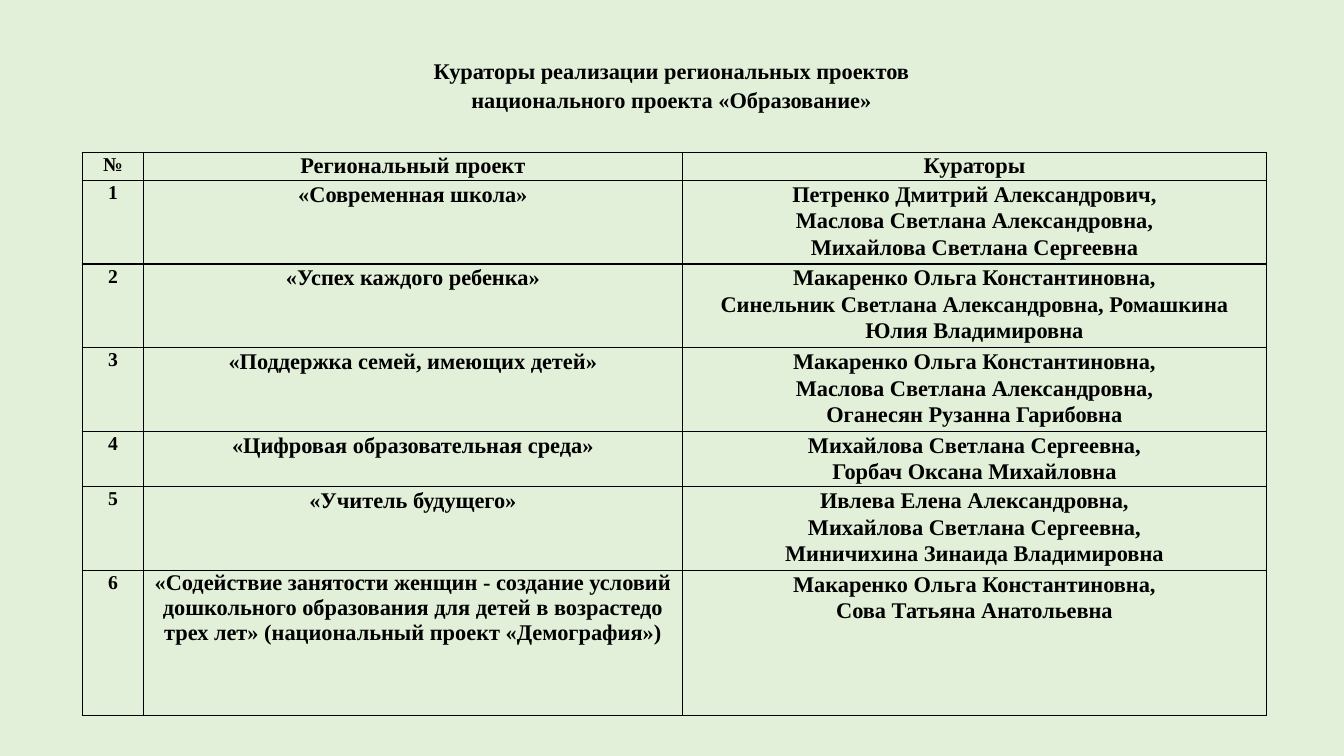
from lxml import etree
from pptx import Presentation
from pptx import util as u
from pptx.dml.color import RGBColor
from pptx.enum import text
from pptx.oxml.ns import qn

COLORS = {"background": "E2F0D9", "ink": "000000"}
FONT = "Times New Roman"
TITLE = "Кураторы реализации региональных проектов\vнационального проекта «Образование»"
HEADER = ("№", "Региональный проект", ["Кураторы"])
PROJECTS = [
    ("«Современная школа»",
     ["Петренко Дмитрий Александрович,",
      "Маслова Светлана Александровна,",
      "Михайлова Светлана Сергеевна"]),
    ("«Успех каждого ребенка»",
     ["Макаренко Ольга Константиновна,",
      "Синельник Светлана Александровна, Ромашкина Юлия Владимировна"]),
    ("«Поддержка семей, имеющих детей»",
     ["Макаренко Ольга Константиновна,",
      "Маслова Светлана Александровна,",
      "Оганесян Рузанна Гарибовна"]),
    ("«Цифровая образовательная среда»",
     ["Михайлова Светлана Сергеевна,",
      "Горбач Оксана Михайловна"]),
    ("«Учитель будущего»",
     ["Ивлева Елена Александровна,",
      "Михайлова Светлана Сергеевна,",
      "Миничихина Зинаида Владимировна"]),
    ("«Содействие занятости женщин - создание условий дошкольного образования "
     "для детей в возрастедо трех лет» (национальный проект «Демография»)",
     ["Макаренко Ольга Константиновна,",
      "Сова Татьяна Анатольевна"]),
]
COL_WIDTHS = [0.6, 5.35, 5.79]
ROW_HEIGHTS = [0.28, 0.83, 0.83, 0.83, 0.55, 0.83, 1.44]


def style(p, size, spacing=1.07):
    p.alignment = text.PP_ALIGN.CENTER
    p.line_spacing = spacing
    p.font.name = FONT
    p.font.size = u.Pt(size)
    p.font.bold = True
    p.font.color.rgb = RGBColor.from_string(COLORS["ink"])


def add_borders(cell):
    tc_pr = cell._tc.get_or_add_tcPr()
    for side in ("lnL", "lnR", "lnT", "lnB"):
        ln = etree.SubElement(tc_pr, qn("a:" + side), w=str(u.Pt(1)))
        fill = etree.SubElement(ln, qn("a:solidFill"))
        etree.SubElement(fill, qn("a:srgbClr"), val=COLORS["ink"])


def fill_cell(cell, lines, size, spacing):
    cell.margin_left = cell.margin_right = u.Inches(0.07)
    cell.margin_top = cell.margin_bottom = 0
    add_borders(cell)
    cell.fill.background()
    tf = cell.text_frame
    tf.text = "\n".join(lines)
    for p in tf.paragraphs:
        style(p, size, spacing)


prs = Presentation()
prs.slide_width, prs.slide_height = u.Inches(13.33), u.Inches(7.5)
s = prs.slides.add_slide(prs.slide_layouts[5])
s.background.fill.solid()
s.background.fill.fore_color.rgb = RGBColor.from_string(COLORS["background"])

title = s.shapes.title
title.left, title.top = u.Inches(0.91), u.Inches(0.08)
title.width, title.height = u.Inches(11.5), u.Inches(1.36)
tf = title.text_frame
tf.text = TITLE
tf.auto_size = text.MSO_AUTO_SIZE.NONE
tf.vertical_anchor = text.MSO_ANCHOR.BOTTOM
tf.margin_bottom = u.Inches(0.32)
style(tf.paragraphs[0], 16)

rows = [HEADER] + [(str(i), *project) for i, project in enumerate(PROJECTS, 1)]
table = s.shapes.add_table(
    len(rows), len(COL_WIDTHS), u.Inches(0.82), u.Inches(1.51),
    u.Inches(sum(COL_WIDTHS)), u.Inches(sum(ROW_HEIGHTS))).table
table.first_row = table.horz_banding = False
for col, width in zip(table.columns, COL_WIDTHS):
    col.width = u.Inches(width)
for row, height in zip(table.rows, ROW_HEIGHTS):
    row.height = u.Inches(height)
for r, (number, project, curators) in enumerate(rows):
    project_spacing = 1.0 if r == len(PROJECTS) else 1.07
    fill_cell(table.cell(r, 0), [number], 14, 1.07)
    fill_cell(table.cell(r, 1), [project], 16, project_spacing)
    fill_cell(table.cell(r, 2), curators, 16, 1.07)

prs.save("out.pptx")
